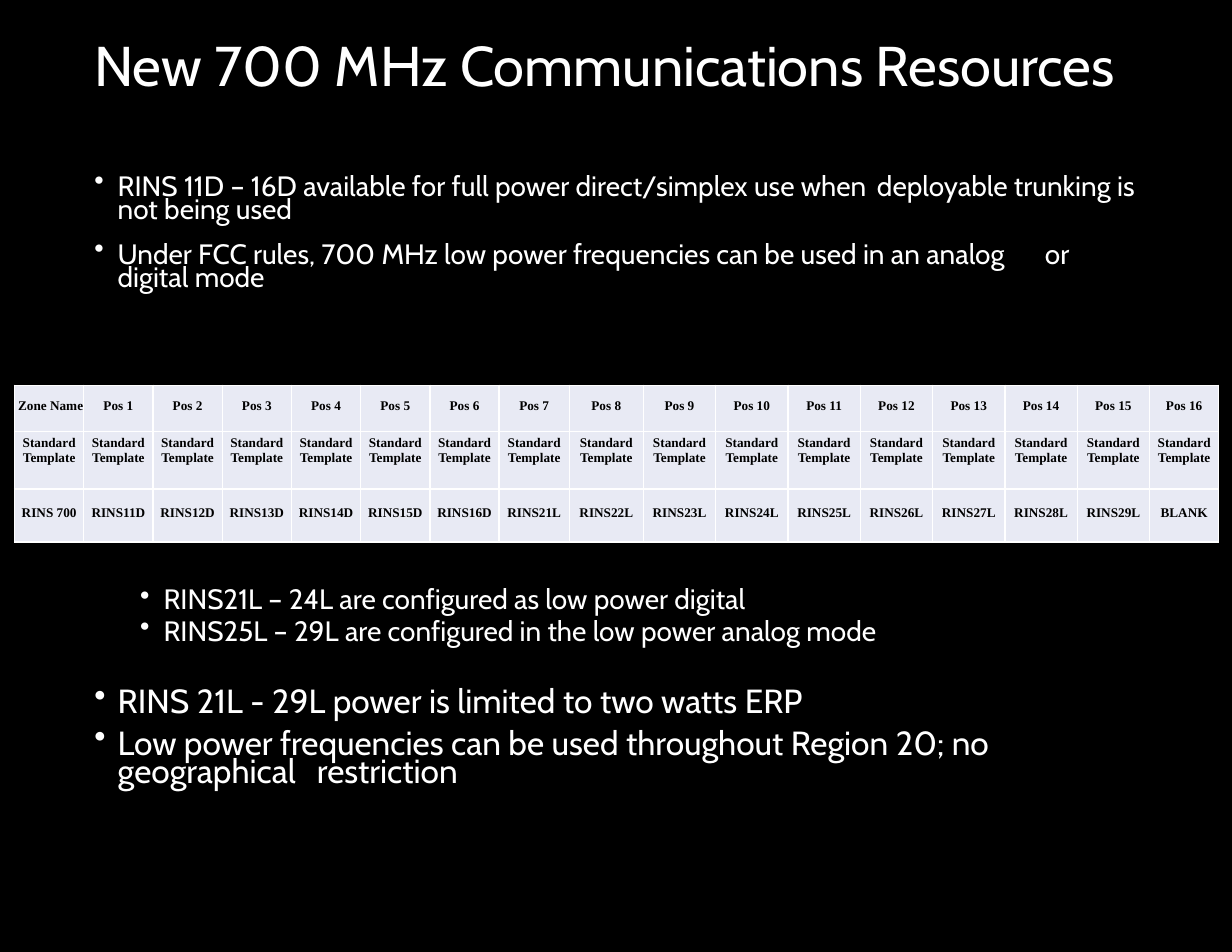
from dataclasses import dataclass

from lxml import etree
from pptx import Presentation
from pptx.dml.color import RGBColor
from pptx.enum.text import PP_ALIGN
from pptx.oxml.ns import qn
from pptx.slide import Slide
from pptx.table import _Cell
from pptx.text.text import _Paragraph
from pptx.util import Cm, Pt

CENTER, LEFT = PP_ALIGN.CENTER, PP_ALIGN.LEFT
COLORS = {"background": "000000", "text": "FFFFFF", "cell": "E8EAF4",
          "cell_text": "000000", "border": "FFFFFF"}
BODY_FONT, TABLE_FONT = "Cabin", "Times New Roman"
HANGING = 0.53
BLANK_LAYOUT = 6


@dataclass(frozen=True)
class Line:
    text: str
    size: float
    indent: float = 0.56
    bullet: bool = True
    spacing: float | Pt = 1.0
    before: float = 0


@dataclass(frozen=True)
class TextBlock:
    left: float
    top: float
    width: float
    height: float
    top_margin: float
    lines: tuple[Line, ...]


@dataclass(frozen=True)
class TableRow:
    height: float
    top_margin: float
    spacing: float | Pt
    labels: tuple[str, ...]


SUB_INDENT, SUB_SPACING = 1.6, Pt(20.5)
BLOCKS = (
    TextBlock(2.11, 0.64, 24.71, 1.57, 0.05, (
        Line("New 700 MHz Communications Resources", 36, 0.03, False, before=1.3),
    )),
    TextBlock(2.11, 3.73, 23.7, 2.92, 0.3, (
        Line("RINS 11D – 16D available for full power direct/simplex use when "
             "\tdeployable trunking is not being used", 18, spacing=0.7, before=8.7),
        Line("Under FCC rules, 700 MHz low power frequencies can be used in an analog "
             "\tor digital mode", 18, spacing=0.7, before=13.2),
    )),
    TextBlock(2.11, 13.18, 23.52, 4.78, 0.05, (
        Line("RINS21L – 24L are configured as low power digital", 18,
             SUB_INDENT, spacing=SUB_SPACING, before=1.1),
        Line("RINS25L – 29L are configured in the low power analog mode", 18,
             SUB_INDENT, spacing=SUB_SPACING),
        Line("RINS 21L - 29L power is limited to two watts ERP", 21.5, before=21),
        Line("Low power frequencies can be used throughout Region 20; no "
             "geographical \trestriction", 21.5, spacing=0.7, before=8.3),
    )),
)

CHANNELS = ([f"RINS{number}D" for number in range(11, 17)]
            + [f"RINS{number}L" for number in range(21, 30)])
COLUMN_WIDTHS = [1.57] * 7 + [1.59, 1.68] + [1.64] * 7 + [1.57]
ROWS = (
    TableRow(1.05, 0.3, Pt(9.4),
             ("Zone Name", *(f"Pos {number}" for number in range(1, 17)))),
    TableRow(1.3, 0.08, 1.02, ("Standard Template",) * 17),
    TableRow(1.2, 0.38, Pt(9.4), ("RINS 700", *CHANNELS, "BLANK")),
)


def color(name: str) -> RGBColor:
    return RGBColor.from_string(COLORS[name])


def format_runs(paragraph: _Paragraph, font: str, size: float, color_name: str,
                bold: bool = False) -> None:
    for run in paragraph.runs:
        run.font.name = font
        run.font.size = Pt(size)
        run.font.bold = bold
        run.font.color.rgb = color(color_name)


def set_indent(paragraph: _Paragraph, line: Line) -> None:
    """Set the left indent and, for a bullet, its hanging mark and tab stop."""
    properties = paragraph._p.get_or_add_pPr()
    indent = str(Cm(line.indent))
    properties.set("marL", indent)
    properties.set("indent", str(-Cm(HANGING)) if line.bullet else "0")
    if line.bullet:
        etree.SubElement(properties, qn("a:buChar"), char="•")
        tabs = etree.SubElement(properties, qn("a:tabLst"))
        etree.SubElement(tabs, qn("a:tab"), pos=indent, algn="l")


def add_text_block(slide: Slide, block: TextBlock) -> None:
    shape = slide.shapes.add_textbox(
        Cm(block.left), Cm(block.top), Cm(block.width), Cm(block.height))
    text_frame = shape.text_frame
    text_frame.word_wrap = True
    text_frame.margin_left = text_frame.margin_right = text_frame.margin_bottom = 0
    text_frame.margin_top = Cm(block.top_margin)
    text_frame.text = "\n".join(line.text for line in block.lines)
    for paragraph, line in zip(text_frame.paragraphs, block.lines):
        paragraph.alignment = LEFT
        paragraph.line_spacing = line.spacing
        paragraph.space_before = Pt(line.before)
        set_indent(paragraph, line)
        format_runs(paragraph, BODY_FONT, line.size, "text")


def set_borders(cell: _Cell) -> None:
    properties = cell._tc.get_or_add_tcPr()
    for position, side in enumerate(("a:lnL", "a:lnR", "a:lnT", "a:lnB")):
        border = etree.Element(qn(side), w=str(Pt(1)))
        fill = etree.SubElement(border, qn("a:solidFill"))
        etree.SubElement(fill, qn("a:srgbClr"), val=COLORS["border"])
        properties.insert(position, border)


def fill_cell(cell: _Cell, label: str, row: TableRow) -> None:
    is_corner = label == "Zone Name"
    cell.margin_left = Cm(0.08) if is_corner else 0
    cell.margin_right = cell.margin_bottom = 0
    cell.margin_top = Cm(row.top_margin)
    cell.fill.solid()
    cell.fill.fore_color.rgb = color("cell")
    set_borders(cell)
    cell.text_frame.text = label
    paragraph = cell.text_frame.paragraphs[0]
    paragraph.alignment = LEFT if is_corner else CENTER
    paragraph.line_spacing = row.spacing
    format_runs(paragraph, TABLE_FONT, 8.5, "cell_text", bold=True)


def add_channel_table(slide: Slide) -> None:
    table = slide.shapes.add_table(
        len(ROWS), len(COLUMN_WIDTHS), Cm(0.33), Cm(8.74),
        Cm(sum(COLUMN_WIDTHS)), Cm(sum(row.height for row in ROWS))).table
    table.first_row = table.horz_banding = False
    for column, width in zip(table.columns, COLUMN_WIDTHS):
        column.width = Cm(width)
    for table_row, row in zip(table.rows, ROWS):
        table_row.height = Cm(row.height)
        for cell, label in zip(table_row.cells, row.labels):
            fill_cell(cell, label, row)


def main() -> None:
    presentation = Presentation()
    presentation.slide_width, presentation.slide_height = Cm(27.94), Cm(21.59)
    slide = presentation.slides.add_slide(presentation.slide_layouts[BLANK_LAYOUT])
    slide.background.fill.solid()
    slide.background.fill.fore_color.rgb = color("background")
    for block in BLOCKS:
        add_text_block(slide, block)
    add_channel_table(slide)
    presentation.save("out.pptx")


if __name__ == "__main__":
    main()
